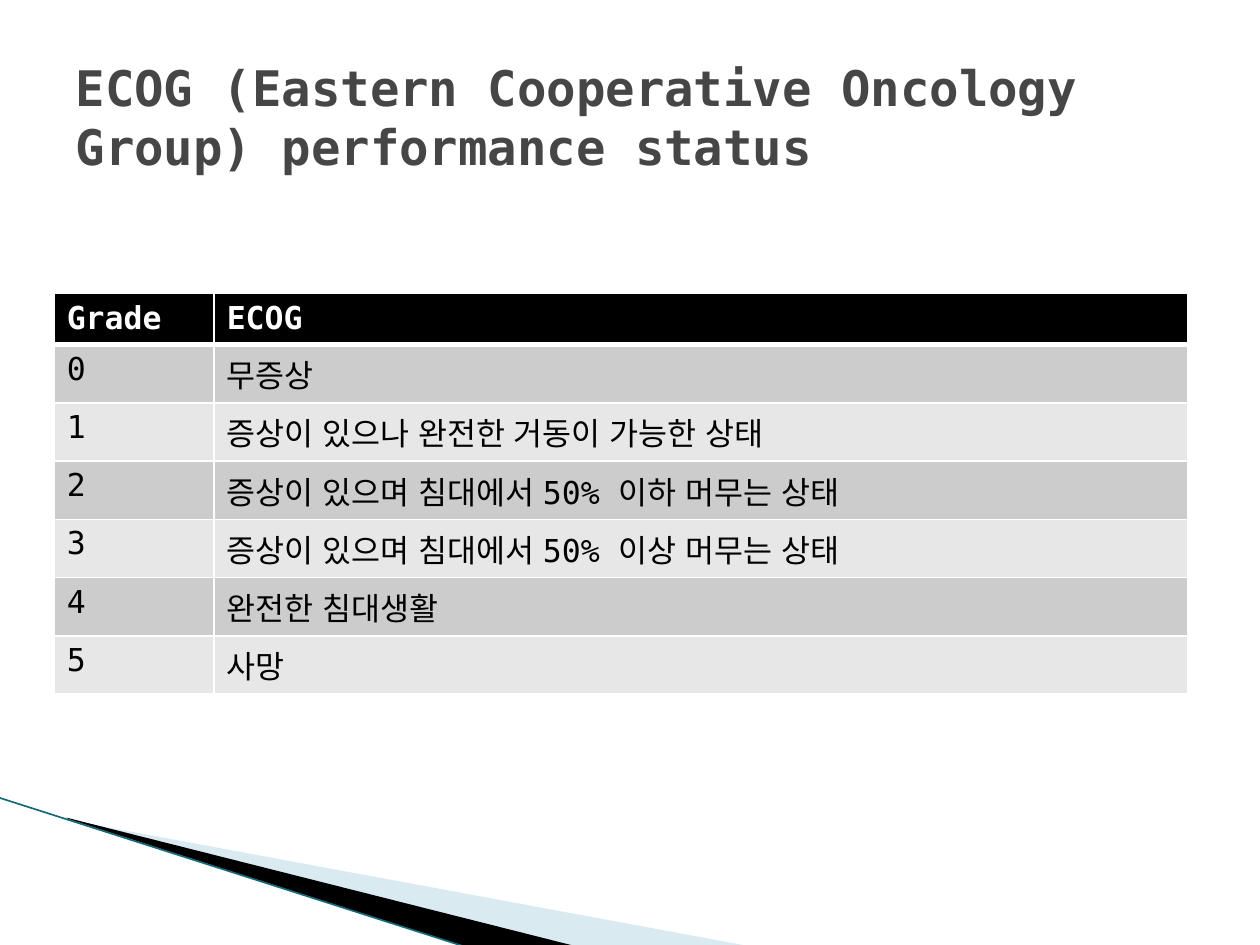
from dataclasses import dataclass

from lxml import etree
from pptx import Presentation, util as u
from pptx.dml.color import RGBColor
from pptx.enum import lang, shapes, text
from pptx.oxml.ns import qn

WIDE, HIGH = 10, 7.5
FONT = "DejaVu Sans Mono"
HUES = {
    "white": "FFFFFF",
    "black": "000000",
    "title": "464646",
    "dark": "CCCCCC",
    "light": "E7E7E7",
    "pale": "A0CBDC",
    "teal": "16697A",
}
HEAD = ("Grade", "ECOG")
GRADES = (
    "무증상",
    "증상이 있으나 완전한 거동이 가능한 상태",
    "증상이 있으며 침대에서 50% 이하 머무는 상태",
    "증상이 있으며 침대에서 50% 이상 머무는 상태",
    "완전한 침대생활",
    "사망",
)


@dataclass
class Wedge:
    points: tuple[tuple[float, float], ...]
    hue: str
    alpha: int = 100


WEDGES = (
    Wedge(((0.55, 6.51), (5.95, 7.51), (4.56, 7.51), (0.55, 6.5)), "pale", 40),
    Wedge(((0.53, 6.49), (4.57, 7.51), (3.72, 7.52), (0.54, 6.5)), "black"),
)


def rgb(hue: str) -> RGBColor:
    return RGBColor.from_string(HUES[hue])


def style(para, size: int, hue: str, bold: bool) -> None:
    font = para.font
    font.name, font.size, font.bold = FONT, u.Pt(size), bold
    font.color.rgb = rgb(hue)


def add_wedge(slide, wedge: Wedge) -> None:
    first, *rest = [(u.Inches(x), u.Inches(y)) for x, y in wedge.points]
    path = slide.shapes.build_freeform(*first)
    path.add_line_segments(rest, close=True)
    shape = path.convert_to_shape()
    shape.shadow.inherit = False
    shape.line.fill.background()
    shape.fill.solid()
    shape.fill.fore_color.rgb = rgb(wedge.hue)
    if wedge.alpha < 100:
        color = shape._element.spPr.find(".//" + qn("a:srgbClr"))
        etree.SubElement(color, qn("a:alpha"), val=str(wedge.alpha * 1000))


def add_edge(slide) -> None:
    ends = (u.Inches(n) for n in (-0.01, 6.33, 3.71, 7.52))
    line = slide.shapes.add_connector(shapes.MSO_CONNECTOR.STRAIGHT, *ends)
    line.line.color.rgb = rgb("teal")
    line.line.width = u.Pt(0.95)
    etree.SubElement(line._element.spPr, qn("a:effectLst"))


def add_rules(cell, widths: dict[str, int]) -> None:
    """Draw white borders, placed ahead of the cell's fill."""
    props = cell._tc.get_or_add_tcPr()
    for spot, (side, width) in enumerate(widths.items()):
        rule = etree.Element(qn(f"a:ln{side}"), w=str(u.Pt(width)))
        fill = etree.SubElement(rule, qn("a:solidFill"))
        etree.SubElement(fill, qn("a:srgbClr"), val=HUES["white"])
        props.insert(spot, rule)


def add_grades(slide) -> None:
    rows = [HEAD, *((str(n), words) for n, words in enumerate(GRADES))]
    place = (u.Inches(n) for n in (0.43, 2.33, 9, 2.84))
    table = slide.shapes.add_table(len(rows), len(HEAD), *place).table
    for col, width in zip(table.columns, (1.27, 7.73)):
        col.width = u.Inches(width)
    for r, row in enumerate(rows):
        head = r == 0
        hue = "black" if head else "dark" if r % 2 else "light"
        for c, words in enumerate(row):
            cell = table.cell(r, c)
            cell.text = words
            para = cell.text_frame.paragraphs[0]
            para.runs[0].font.language_id = lang.MSO_LANGUAGE_ID.KOREAN
            style(para, 18, "white" if head else "black", head)
            cell.fill.solid()
            cell.fill.fore_color.rgb = rgb(hue)
            add_rules(cell, {"L": 1, "R": 1, "T": 3 if r == 1 else 1, "B": 3 if head else 1})


def set_title(slide) -> None:
    title = slide.shapes.title
    title.left, title.top, title.width, title.height = (
        u.Inches(n) for n in (0.5, 0.3, 9, 1.25))
    frame = title.text_frame
    frame.text = "ECOG (Eastern Cooperative Oncology Group) performance status"
    frame.word_wrap = True
    frame.auto_size = text.MSO_AUTO_SIZE.NONE
    frame.vertical_anchor = text.MSO_ANCHOR.MIDDLE
    para = frame.paragraphs[0]
    para.alignment = text.PP_ALIGN.LEFT
    style(para, 28, "title", True)


def main() -> None:
    deck = Presentation()
    deck.slide_width, deck.slide_height = u.Inches(WIDE), u.Inches(HIGH)
    slide = deck.slides.add_slide(deck.slide_layouts[5])
    for wedge in WEDGES:
        add_wedge(slide, wedge)
    add_edge(slide)
    add_grades(slide)
    set_title(slide)
    deck.save("out.pptx")


if __name__ == "__main__":
    main()
